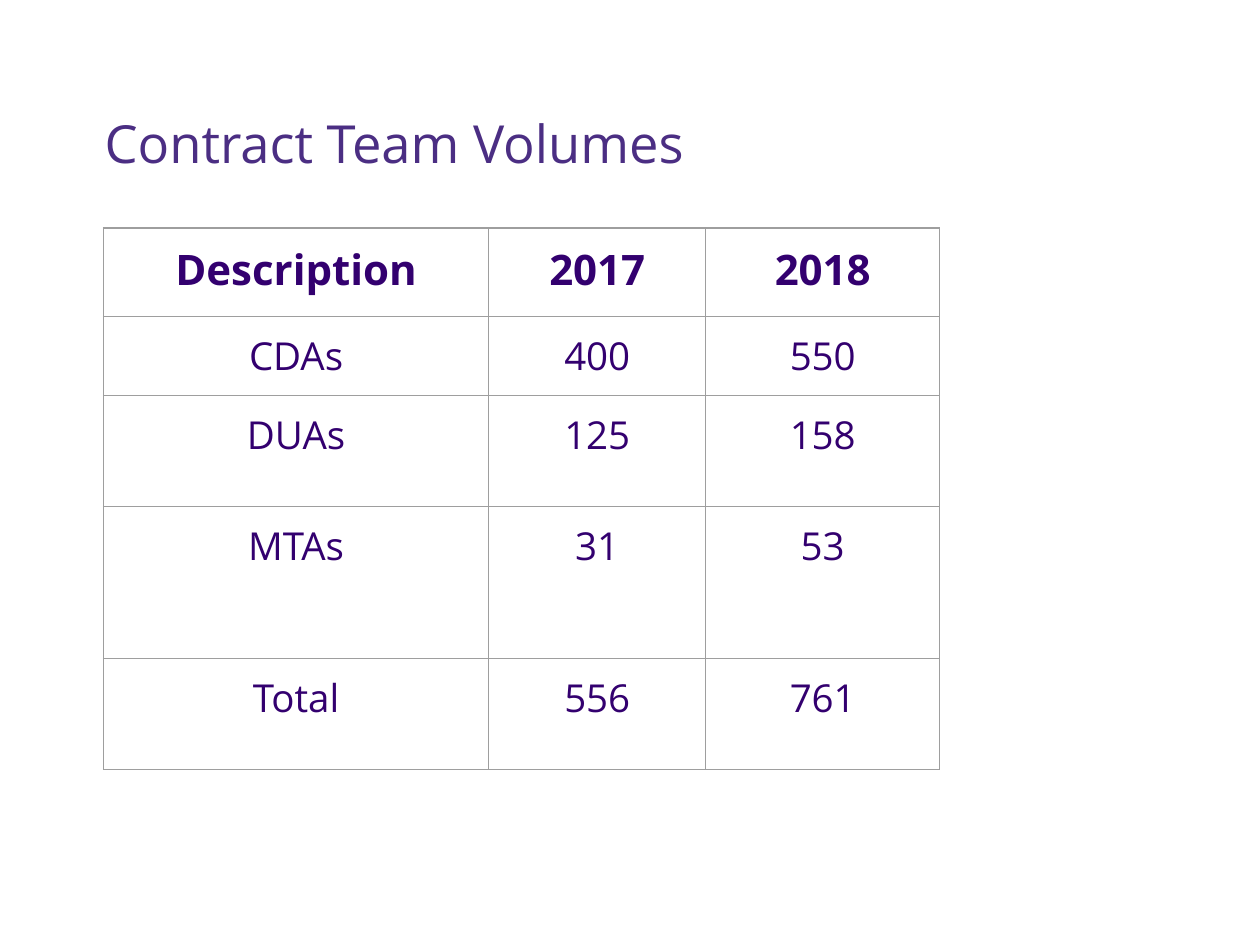
from pptx import Presentation
from pptx.dml.color import RGBColor
from pptx.enum.text import MSO_ANCHOR, PP_ALIGN
from pptx.oxml import parse_xml
from pptx.oxml.ns import nsdecls
from pptx.util import Inches, Pt

TITLE_PURPLE = RGBColor(0x4B, 0x2E, 0x83)
TABLE_PURPLE = RGBColor(0x33, 0x00, 0x6F)
BORDER_GREY = RGBColor(0x9E, 0x9E, 0x9E)
FONT = "Open Sans"
INSET = Inches(0.1)

VOLUMES = [
    ("Description", "2017", "2018"),
    ("CDAs", "400", "550"),
    ("DUAs", "125", "158"),
    ("MTAs", "31", "53"),
    ("Total", "556", "761"),
]
COL_WIDTHS = (3.06, 1.72, 1.86)
ROW_HEIGHTS = (0.7, 0.63, 0.88, 1.21, 0.88)


def format_paragraph(p, size, color, align, bold=False):
    p.alignment = align
    for r in p.runs:
        r.font.name = FONT
        r.font.size = Pt(size)
        r.font.bold = bold
        r.font.color.rgb = color


def set_insets(target):
    """Give a cell or text frame the same margin on all sides."""
    target.margin_left = target.margin_right = INSET
    target.margin_top = target.margin_bottom = INSET


def add_title(slide, text):
    sp = slide.shapes.title
    sp.left, sp.top = Inches(0.73), Inches(0.41)
    sp.width, sp.height = Inches(8.95), Inches(1.08)
    tf = sp.text_frame
    tf.text = text
    tf.word_wrap = True
    tf.vertical_anchor = MSO_ANCHOR.BOTTOM
    set_insets(tf)
    p = tf.paragraphs[0]
    p.line_spacing = 0.9
    p.space_before = Pt(6)
    format_paragraph(p, 30, TITLE_PURPLE, PP_ALIGN.LEFT)


def set_borders(cell):
    tc_pr = cell._tc.get_or_add_tcPr()
    for i, side in enumerate(("lnL", "lnR", "lnT", "lnB")):
        tc_pr.insert(i, parse_xml(
            f'<a:{side} {nsdecls("a")} w="{Pt(0.75)}"><a:solidFill>'
            f'<a:srgbClr val="{BORDER_GREY}"/></a:solidFill></a:{side}>'))


def format_cell(cell, text, header):
    cell.text = text
    cell.vertical_anchor = MSO_ANCHOR.TOP
    cell.fill.background()
    set_insets(cell)
    set_borders(cell)
    format_paragraph(cell.text_frame.paragraphs[0], 24 if header else 22,
                     TABLE_PURPLE, PP_ALIGN.CENTER, header)


def add_volume_table(slide):
    frame = slide.shapes.add_table(
        len(VOLUMES), len(COL_WIDTHS), Inches(0.82), Inches(1.81),
        Inches(sum(COL_WIDTHS)), Inches(sum(ROW_HEIGHTS)))
    table = frame.table
    table.horz_banding = False
    for col, width in zip(table.columns, COL_WIDTHS):
        col.width = Inches(width)
    for i, (row, height) in enumerate(zip(table.rows, ROW_HEIGHTS)):
        row.height = Inches(height)
        for cell, text in zip(row.cells, VOLUMES[i]):
            format_cell(cell, text, header=i == 0)


def main():
    prs = Presentation()
    prs.slide_width, prs.slide_height = Inches(10), Inches(7.5)
    slide = prs.slides.add_slide(prs.slide_layouts[5])
    add_title(slide, "Contract Team Volumes")
    add_volume_table(slide)
    prs.save("out.pptx")


if __name__ == "__main__":
    main()
